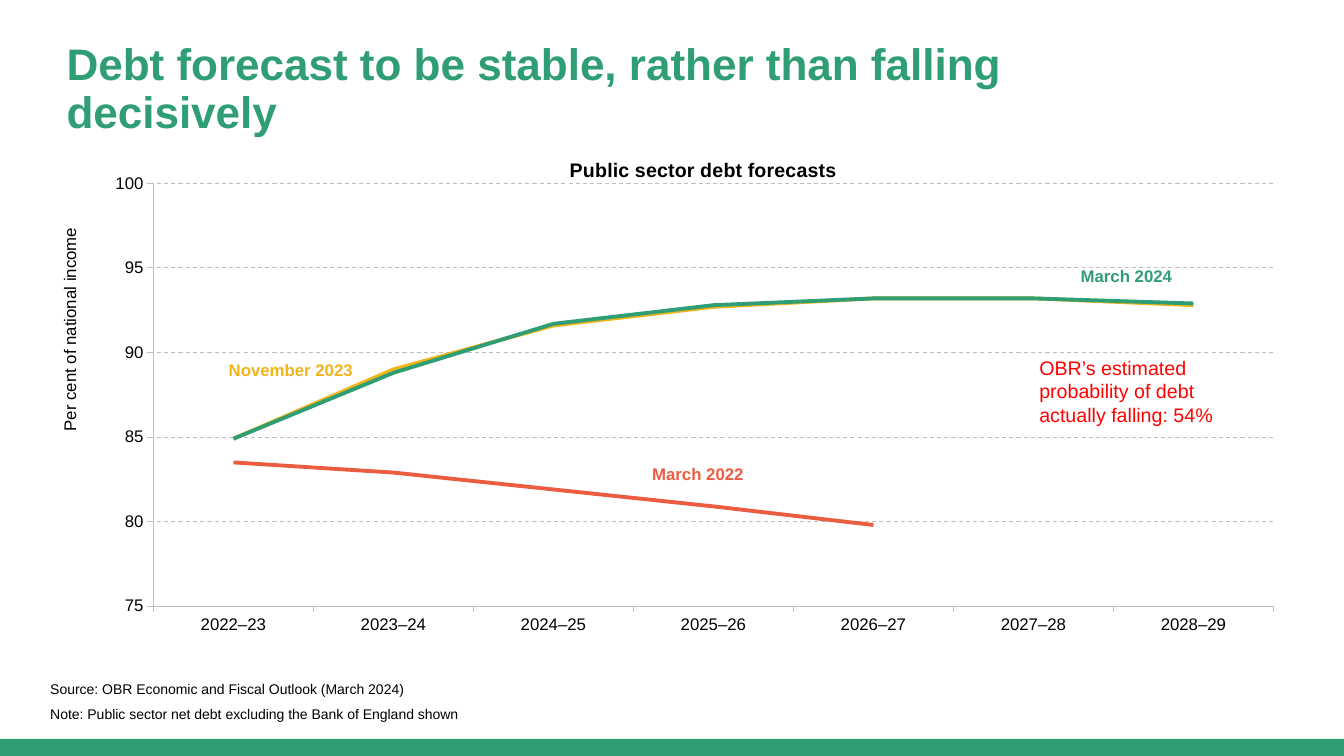
from dataclasses import dataclass

from lxml import etree
from pptx import Presentation
from pptx.chart.data import CategoryChartData
from pptx.dml.color import RGBColor
from pptx.enum.chart import XL_CHART_TYPE, XL_MARKER_STYLE, XL_TICK_MARK
from pptx.enum.dml import MSO_LINE
from pptx.enum.shapes import MSO_SHAPE
from pptx.enum.text import MSO_ANCHOR, MSO_AUTO_SIZE, PP_ALIGN
from pptx.oxml.ns import qn
from pptx.util import Inches, Pt

LINE = XL_CHART_TYPE.LINE
PLAIN = XL_MARKER_STYLE.NONE
OUT = XL_TICK_MARK.OUTSIDE
DASH = MSO_LINE.DASH
RECT = MSO_SHAPE.RECTANGLE
TOP, BOTTOM = MSO_ANCHOR.TOP, MSO_ANCHOR.BOTTOM
FIXED = MSO_AUTO_SIZE.NONE
LEFT = PP_ALIGN.LEFT


@dataclass(frozen=True)
class Theme:
    face: str = "Arial"
    green: str = "309E75"
    gold: str = "F2B517"
    coral: str = "EB5C40"
    red: str = "FF0000"
    ink: str = "000000"
    grid: str = "BFBFBF"
    head: float = 31.5
    lead: float = 14
    body: float = 12
    small: float = 10
    hair: float = 0.75
    thick: float = 2.75


class Deck:
    def __init__(self, theme):
        self.theme = theme
        self.show = Presentation()
        self.show.slide_width = Inches(13.33)
        self.show.slide_height = Inches(7.5)
        self.slide = self.show.slides.add_slide(self.show.slide_layouts[5])

    def style(self, font, size, color, bold=False):
        font.name = self.theme.face
        font.size = Pt(size)
        font.bold = bold
        font.color.rgb = RGBColor.from_string(color)

    def stroke(self, line, color, width):
        line.color.rgb = RGBColor.from_string(color)
        line.width = Pt(width)

    def fill(self, box, text, size, color, bold=False, anchor=TOP):
        frame = box.text_frame
        frame.text = text
        frame.word_wrap = True
        frame.auto_size = FIXED
        frame.vertical_anchor = anchor
        para = frame.paragraphs[0]
        para.alignment = LEFT
        self.style(para.runs[0].font, size, color, bold)
        return para

    def title(self, area, text):
        box = self.slide.shapes.title
        box.left, box.top, box.width, box.height = map(Inches, area)
        para = self.fill(box, text, self.theme.head, self.theme.green, True)
        para.line_spacing = 0.9

    def text(self, area, *style, **extra):
        box = self.slide.shapes.add_textbox(*map(Inches, area))
        self.fill(box, *style, **extra)

    def bar(self, area, color):
        box = self.slide.shapes.add_shape(RECT, *map(Inches, area))
        box.shadow.inherit = False
        box.fill.solid()
        box.fill.fore_color.rgb = RGBColor.from_string(color)
        box.line.fill.background()

    def place(self, node, spot, **more):
        for old in node.findall(qn("c:layout")):
            node.remove(old)
        layout = etree.Element(qn("c:layout"))
        manual = etree.SubElement(layout, qn("c:manualLayout"))
        modes = {"xMode": "edge", "yMode": "edge"}
        for key, value in {**more, **modes, **spot}.items():
            etree.SubElement(manual, qn(f"c:{key}")).set("val", str(value))
        node.insert(1 if node.find(qn("c:tx")) is not None else 0, layout)

    def label(self, title, text, size, bold, spot):
        title.text_frame.text = text
        run = title.text_frame.paragraphs[0].runs[0]
        self.style(run.font, size, self.theme.ink, bold)
        self.place(title.element, spot)

    def chart(self, area, name, unit, cats, lines):
        look = self.theme
        data = CategoryChartData(number_format="0.0")
        data.categories = cats
        for key, color, values in lines:
            data.add_series(key, values)
        frame = self.slide.shapes.add_chart(LINE, *map(Inches, area), data)
        chart = frame.chart
        self.style(chart.font, look.body, look.ink)
        chart.has_legend = False

        for series, (key, color, values) in zip(chart.plots[0].series, lines):
            series.smooth = False
            series.marker.style = PLAIN
            self.stroke(series.format.line, color, look.thick)
        chart.plots[0].vary_by_categories = False

        rise = chart.value_axis
        for axis in (chart.category_axis, rise):
            axis.major_tick_mark = OUT
            self.style(axis.tick_labels.font, look.body, look.ink)
            self.stroke(axis.format.line, look.grid, look.hair)
        rise.minimum_scale, rise.maximum_scale, rise.major_unit = 75, 100, 5
        rise.tick_labels.number_format = "#,##0"
        rise.tick_labels.number_format_is_linked = False
        rise.has_major_gridlines = True
        grid = rise.major_gridlines.format.line
        self.stroke(grid, look.grid, look.hair)
        grid.dash_style = DASH

        chart.has_title = True
        self.label(chart.chart_title, name, look.lead, True, {"x": 0.41, "y": 0.01})
        rise.has_title = True
        self.label(rise.axis_title, unit, look.body, False, {"x": 0.0, "y": 0.15})
        turn = rise.axis_title.element.find(".//" + qn("a:bodyPr"))
        turn.set("rot", "-5400000")
        turn.set("vert", "horz")
        plot = chart.element.find(".//" + qn("c:plotArea"))
        spot = {"x": 0.078, "y": 0.068, "w": 0.901, "h": 0.839}
        self.place(plot, spot, layoutTarget="inner")


def main():
    look = Theme()
    deck = Deck(look)
    deck.bar((0, 7.33, 13.33, 0.17), look.green)
    deck.title((0.56, 0.37, 11.15, 0.63),
               "Debt forecast to be stable, rather than falling decisively")

    years = [f"{year}–{year % 100 + 1}" for year in range(2022, 2029)]
    lines = [
        ("November 2023", look.gold, (84.9, 89, 91.6, 92.7, 93.2, 93.2, 92.8)),
        ("March 2024", look.green, (84.9, 88.8, 91.7, 92.8, 93.2, 93.2, 92.9)),
        ("March 2022", look.coral, (83.5, 82.9, 81.9, 80.9, 79.8, None, None)),
    ]
    deck.chart((0.56, 1.48, 12.33, 5), "Public sector debt forecasts",
               "Per cent of national income", years, lines)

    areas = [(2.17, 3.52, 2.27, 0.32), (10.62, 2.59, 1.57, 0.36), (6.37, 4.55, 2.59, 0.28)]
    for area, (key, color, values) in zip(areas, lines):
        deck.text(area, key, look.body, color, True)
    deck.text((10.21, 3.48, 2.23, 0.81),
              "OBR’s estimated probability of debt actually falling: 54%",
              look.lead, look.red)
    deck.text((0.4, 6.66, 8.77, 0.31),
              "Source: OBR Economic and Fiscal Outlook (March 2024)",
              look.small, look.ink, anchor=BOTTOM)
    deck.text((0.4, 6.95, 8.07, 0.27),
              "Note: Public sector net debt excluding the Bank of England shown",
              look.small, look.ink)
    deck.show.save("out.pptx")


if __name__ == "__main__":
    main()
